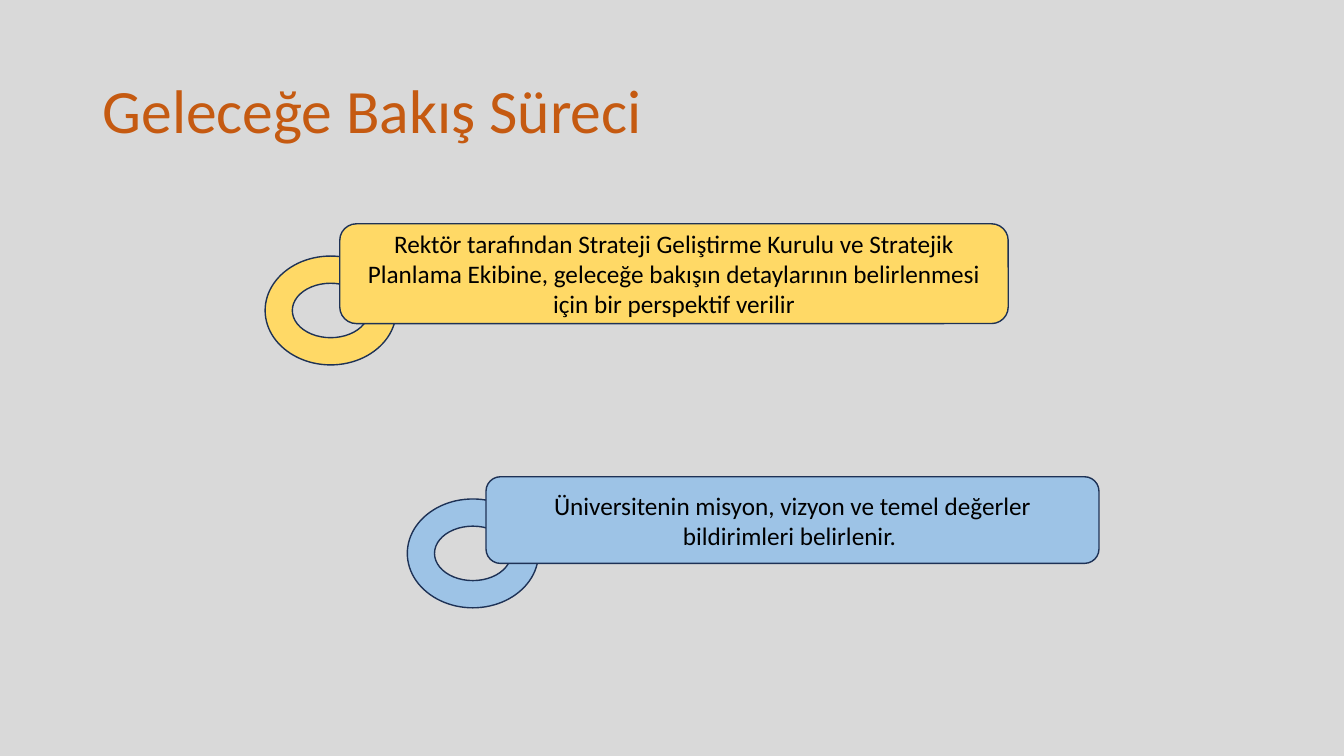
from dataclasses import dataclass

from pptx import Presentation
from pptx.dml.color import RGBColor
from pptx.enum.shapes import MSO_SHAPE
from pptx.enum.text import MSO_ANCHOR, PP_ALIGN
from pptx.shapes.autoshape import Shape
from pptx.slide import Slide
from pptx.util import Emu, Pt

DONUT = MSO_SHAPE.DONUT
ROUNDED = MSO_SHAPE.ROUNDED_RECTANGLE
MIDDLE = MSO_ANCHOR.MIDDLE
LEFT, CENTER = PP_ALIGN.LEFT, PP_ALIGN.CENTER

EMU_PER_PX = 9144  # 100 px to the inch
BLANK_LAYOUT = 6


@dataclass(frozen=True)
class Theme:
    font: str = "Calibri"
    background: str = "D9D9D9"
    title: str = "C55A11"
    body: str = "000000"
    outline: str = "1E3256"
    yellow: str = "FFD966"
    blue: str = "9DC3E6"
    title_size: int = 44
    body_size: int = 18
    outline_width: int = 1


@dataclass(frozen=True)
class Area:
    left: int
    top: int
    width: int
    height: int

    def emu(self) -> tuple[Emu, ...]:
        sides = (self.left, self.top, self.width, self.height)
        return tuple(px(side) for side in sides)


@dataclass(frozen=True)
class Step:
    ring: Area
    card: Area
    fill: str
    text: str


THEME = Theme()
TITLE_AREA = Area(92, 40, 1150, 145)
STEPS = (
    Step(
        Area(263, 254, 130, 108),
        Area(337, 222, 663, 99),
        THEME.yellow,
        "Rektör tarafından Strateji Geliştirme Kurulu ve Stratejik Planlama "
        "Ekibine, geleceğe bakışın detaylarının belirlenmesi için bir "
        "perspektif verilir",
    ),
    Step(
        Area(404, 495, 130, 108),
        Area(482, 473, 608, 86),
        THEME.blue,
        "Üniversitenin misyon, vizyon ve temel değerler bildirimleri belirlenir. ",
    ),
)


def px(length: int) -> Emu:
    return Emu(length * EMU_PER_PX)


def write(box: Shape, text: str, size: int, color: str, align: PP_ALIGN) -> None:
    frame = box.text_frame
    frame.word_wrap = True
    frame.vertical_anchor = MIDDLE
    para = frame.paragraphs[0]
    para.alignment = align
    span = para.add_run()
    span.text = text
    span.font.name = THEME.font
    span.font.size = Pt(size)
    span.font.color.rgb = RGBColor.from_string(color)


def add_title(page: Slide, text: str) -> None:
    box = page.shapes.add_textbox(*TITLE_AREA.emu())
    write(box, text, THEME.title_size, THEME.title, LEFT)
    box.text_frame.paragraphs[0].line_spacing = 0.9


def add_outlined(page: Slide, kind: MSO_SHAPE, area: Area, fill: str) -> Shape:
    shape = page.shapes.add_shape(kind, *area.emu())
    shape.shadow.inherit = False
    shape.fill.solid()
    shape.fill.fore_color.rgb = RGBColor.from_string(fill)
    shape.line.color.rgb = RGBColor.from_string(THEME.outline)
    shape.line.width = Pt(THEME.outline_width)
    return shape


def add_step(page: Slide, step: Step) -> None:
    add_outlined(page, DONUT, step.ring, step.fill)
    card = add_outlined(page, ROUNDED, step.card, step.fill)
    write(card, step.text, THEME.body_size, THEME.body, CENTER)


def main() -> None:
    # Deck and background
    deck = Presentation()
    deck.slide_width, deck.slide_height = px(1333), px(750)
    page = deck.slides.add_slide(deck.slide_layouts[BLANK_LAYOUT])
    page.background.fill.solid()
    page.background.fill.fore_color.rgb = RGBColor.from_string(THEME.background)

    # Title
    add_title(page, "Geleceğe Bakış Süreci")

    # Process steps, each a card hung on a ring
    for step in STEPS:
        add_step(page, step)

    deck.save("out.pptx")


if __name__ == "__main__":
    main()
